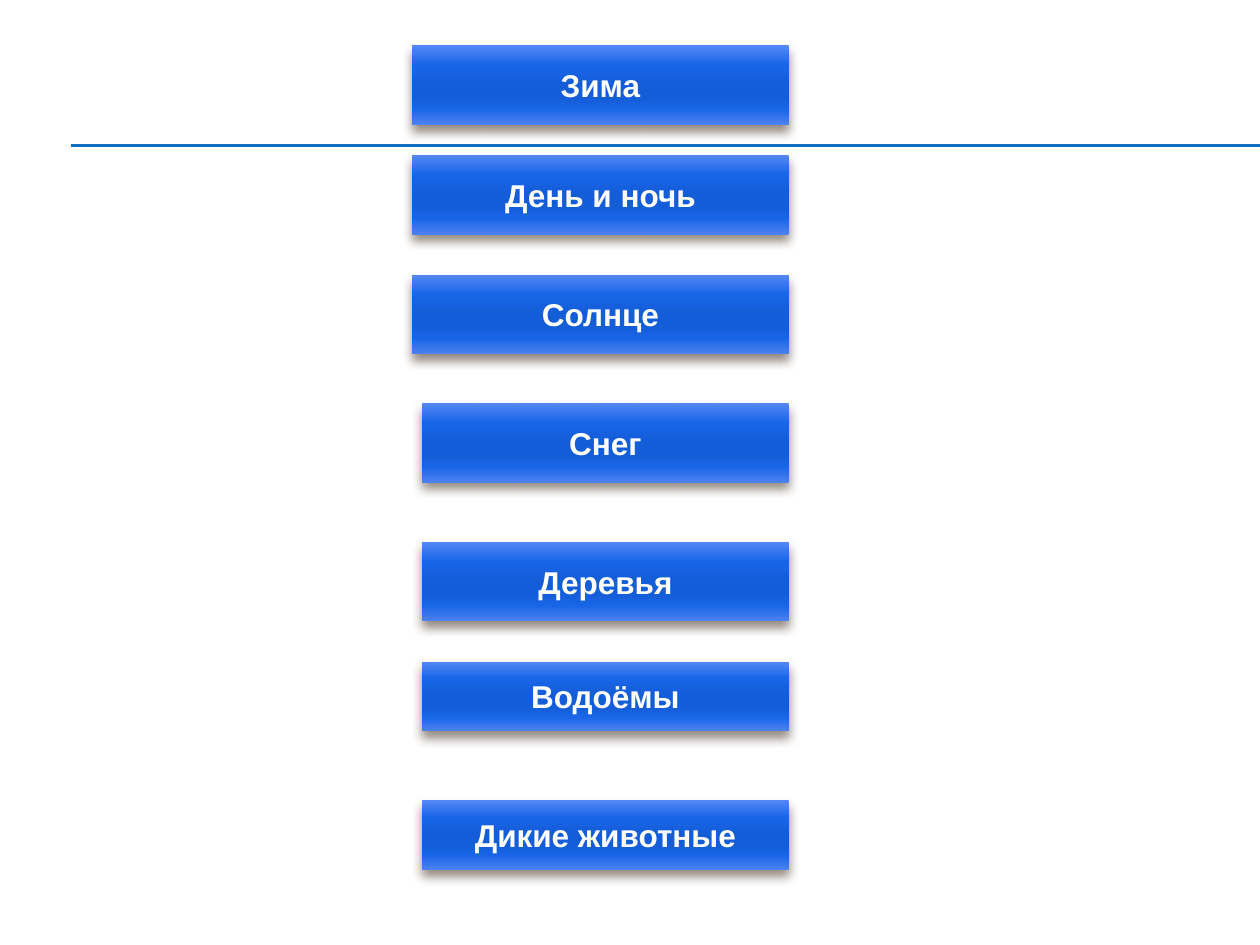
from lxml.etree import SubElement
from pptx import Presentation
from pptx.dml.color import RGBColor as RGB
from pptx.enum.shapes import MSO_CONNECTOR as CONN, MSO_SHAPE as SHAPE
from pptx.enum.text import MSO_ANCHOR as ANCHOR, PP_ALIGN as ALIGN
from pptx.oxml.ns import qn
from pptx.util import Inches, Pt

# label, left, top, height
TOPICS = [
    ("Зима", 3.27, 0.36, 0.63),
    ("День и ночь", 3.27, 1.23, 0.63),
    ("Солнце", 3.27, 2.18, 0.63),
    ("Снег", 3.35, 3.2, 0.63),
    ("Деревья", 3.35, 4.3, 0.63),
    ("Водоёмы", 3.35, 5.25, 0.55),
    ("Дикие животные", 3.35, 6.35, 0.55),
]
RIGHT = 6.26
RULE_LEFT, RULE_RIGHT, RULE_TOPS = 0.56, 10, (1.15, 1.16)
THEME = {
    "font": "Arial",
    "size": Pt(18),
    "text": RGB.from_string("FFFFFF"),
    "rule": RGB.from_string("0F6FC6"),
    "rule_width": Pt(0.75),
    "gradient": [(0, "5588F5"), (25, "1865E8"), (50, "145DD8"),
                 (65, "145DD8"), (80, "1865E7"), (100, "4C81EF")],
    "shadow": {"color": "4E3B30", "alpha": 60, "blur": Pt(6), "dist": Pt(4), "angle": 90},
}


def add_rule(slide, top):
    line = slide.shapes.add_connector(
        CONN.STRAIGHT, Inches(RULE_LEFT), Inches(top), Inches(RULE_RIGHT), Inches(top))
    line.line.color.rgb = THEME["rule"]
    line.line.width = THEME["rule_width"]
    SubElement(line._element.spPr, qn("a:effectLst"))


def set_gradient(sp):
    sp.fill.gradient()
    sp.fill.gradient_angle = 270
    stops = sp._element.spPr.find(".//" + qn("a:gsLst"))
    for old in list(stops):
        stops.remove(old)
    for pos, color in THEME["gradient"]:
        stop = SubElement(stops, qn("a:gs"), pos=str(pos * 1000))
        SubElement(stop, qn("a:srgbClr"), val=color)


def set_shadow(sp):
    shadow = THEME["shadow"]
    sp.shadow.inherit = False
    effects = sp._element.spPr.find(qn("a:effectLst"))
    outer = SubElement(effects, qn("a:outerShdw"), blurRad=str(shadow["blur"]),
                       dist=str(shadow["dist"]), dir=str(shadow["angle"] * 60000),
                       rotWithShape="0")
    color = SubElement(outer, qn("a:srgbClr"), val=shadow["color"])
    SubElement(color, qn("a:alpha"), val=str(shadow["alpha"] * 1000))


def add_topic(slide, label, left, top, height):
    sp = slide.shapes.add_shape(
        SHAPE.RECTANGLE, Inches(left), Inches(top), Inches(RIGHT - left), Inches(height))
    set_gradient(sp)
    sp.line.fill.background()
    set_shadow(sp)
    tf = sp.text_frame
    tf.word_wrap = False
    tf.vertical_anchor = ANCHOR.MIDDLE
    p = tf.paragraphs[0]
    p.alignment = ALIGN.CENTER
    r = p.add_run()
    r.text = label
    r.font.name = THEME["font"]
    r.font.size = THEME["size"]
    r.font.bold = True
    r.font.color.rgb = THEME["text"]


def main():
    """Build the slide of winter topics as a column of labelled buttons."""
    prs = Presentation()
    prs.slide_width, prs.slide_height = Inches(10), Inches(7.5)
    slide = prs.slides.add_slide(prs.slide_layouts[6])
    for top in RULE_TOPS:
        add_rule(slide, top)
    for topic in TOPICS:
        add_topic(slide, *topic)
    prs.save("out.pptx")


if __name__ == "__main__":
    main()
